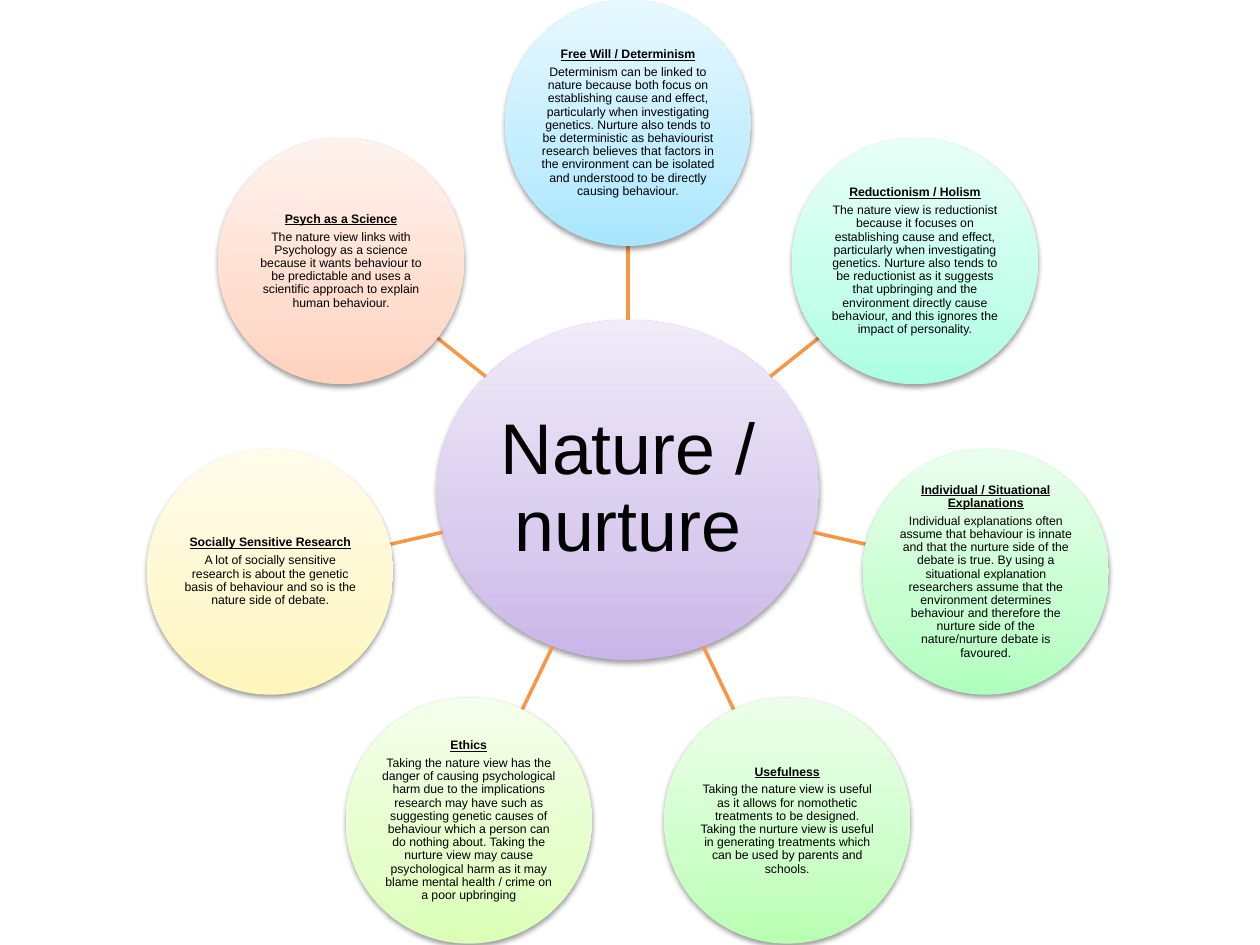
from math import cos, hypot, pi, sin

from lxml.etree import SubElement
from pptx import Presentation
from pptx.dml.color import RGBColor
from pptx.enum.shapes import MSO_CONNECTOR, MSO_SHAPE
from pptx.enum.text import MSO_ANCHOR, PP_ALIGN
from pptx.oxml.ns import qn
from pptx.util import Emu, Pt
from copy import deepcopy

# Content: heading, body, gradient colours from bottom to top; clockwise from 12 o'clock
HUB = ("Nature / nurture", ("C9B5E8", "D8CBEE", "F0EAF9"))
DEBATES = [
    ("Free Will / Determinism",
     "Determinism can be linked to nature because both focus on establishing cause and effect, "
     "particularly when investigating genetics. Nurture also tends to be deterministic as "
     "behaviourist research believes that factors in the environment can be isolated and "
     "understood to be directly causing behaviour.",
     ("A7E6FF", "C1EDFF", "E7F8FF")),
    ("Reductionism / Holism",
     "The nature view is reductionist because it focuses on establishing cause and effect, "
     "particularly when investigating genetics. Nurture also tends to be reductionist as it "
     "suggests that upbringing and the environment directly cause behaviour, and this ignores "
     "the impact of personality.",
     ("ABFFE3", "C3FFEA", "E8FFF7")),
    ("Individual / Situational Explanations",
     "Individual explanations often assume that behaviour is innate and that the nurture side "
     "of the debate is true. By using a situational explanation researchers assume that the "
     "environment determines behaviour and therefore the nurture side of the nature/nurture "
     "debate is favoured.",
     ("AFFFBD", "C6FFD0", "E9FFED")),
    ("Usefulness",
     "Taking the nature view is useful as it allows for nomothetic treatments to be designed. "
     "Taking the nurture view is useful in generating treatments which can be used by parents "
     "and schools.",
     ("B9FFB2", "CDFFC9", "ECFFEA")),
    ("Ethics",
     "Taking the nature view has the danger of causing psychological harm due to the "
     "implications research may have such as suggesting genetic causes of behaviour which a "
     "person can do nothing about. Taking the nurture view may cause psychological harm as it "
     "may blame mental health / crime on a poor upbringing",
     ("DBFFB6", "E5FFCB", "F5FFEB")),
    ("Socially Sensitive Research",
     "A lot of socially sensitive research is about the genetic basis of behaviour and so is "
     "the nature side of debate.",
     ("FFF6B9", "FFF8CE", "FFFCEC")),
    ("Psych as a Science",
     "The nature view links with Psychology as a science because it wants behaviour to be "
     "predictable and uses a scientific approach to explain human behaviour.",
     ("FFD2BD", "FFDED0", "FFF2ED")),
]


class Theme:
    font = "Arial"
    text = RGBColor.from_string("000000")
    spoke = RGBColor.from_string("F79646")
    spoke_width = Pt(2)
    hub_size = 41
    debate_size = 7
    heading_gap = 2.7
    stops = (0, 0.35, 1)


# Geometry in px
SLIDE_WIDTH, SLIDE_HEIGHT = 1260, 945
CENTRE_X, CENTRE_Y = 628, 490
HUB_WIDTH, HUB_HEIGHT = 382, 340
CIRCLE = 246
ORBIT = 367
HUB_INSET = 4


def px(value):
    return Emu(round(value * 914400 / 126))


def polar(radius, angle):
    """Point at a clockwise angle from 12 o'clock around the hub."""
    return CENTRE_X + radius * sin(angle), CENTRE_Y - radius * cos(angle)


def add_text(frame, text, size, first=True, bold=None, underline=None, gap=0):
    paragraph = frame.paragraphs[0] if first else frame.add_paragraph()
    paragraph.alignment = PP_ALIGN.CENTER
    paragraph.line_spacing = 0.9
    paragraph.space_after = Pt(gap)
    run = paragraph.add_run()
    run.text = text
    font = run.font
    font.name, font.size = Theme.font, Pt(size)
    font.bold, font.underline = bold, underline
    font.color.rgb = Theme.text


def add_shadow(shape):
    shape.shadow.inherit = False
    effects = shape._element.spPr.find(qn("a:effectLst"))
    shadow = SubElement(effects, qn("a:outerShdw"), blurRad=str(Pt(3.1)), dist=str(Pt(1.6)),
                        dir="5400000", rotWithShape="0")
    color = SubElement(shadow, qn("a:srgbClr"), val="000000")
    SubElement(color, qn("a:alpha"), val="38000")


def add_bubble(slide, x, y, width, height, colors, inset=0):
    """Shaded ellipse centred on x, y; returns its text frame."""
    shape = slide.shapes.add_shape(MSO_SHAPE.OVAL, px(x - width / 2), px(y - height / 2),
                                   px(width), px(height))
    shape.line.fill.background()
    shape.fill.gradient()
    shape.fill.gradient_angle = 90
    stop_list = shape._element.spPr.find(".//" + qn("a:gsLst"))
    stop_list.append(deepcopy(stop_list[0]))
    for stop, color, position in zip(shape.fill.gradient_stops, colors, Theme.stops):
        stop.color.rgb = RGBColor.from_string(color)
        stop.position = position
    add_shadow(shape)
    frame = shape.text_frame
    frame.word_wrap = True
    frame.vertical_anchor = MSO_ANCHOR.MIDDLE
    frame.margin_left = frame.margin_right = px(inset)
    frame.margin_top = frame.margin_bottom = px(inset)
    return frame


def add_spoke(slide, angle):
    """Line from the hub's edge to the near edge of the circle at this angle."""
    hub_edge = 1 / hypot(2 * sin(angle) / HUB_WIDTH, 2 * cos(angle) / HUB_HEIGHT)
    ends = polar(hub_edge, angle) + polar(ORBIT - CIRCLE / 2, angle)
    line = slide.shapes.add_connector(MSO_CONNECTOR.STRAIGHT, *map(px, ends))
    line.line.color.rgb = Theme.spoke
    line.line.width = Theme.spoke_width
    SubElement(line._element.spPr, qn("a:effectLst"))


def main():
    presentation = Presentation()
    presentation.slide_width, presentation.slide_height = px(SLIDE_WIDTH), px(SLIDE_HEIGHT)
    slide = presentation.slides.add_slide(presentation.slide_layouts[6])

    # Hub
    title, colors = HUB
    frame = add_bubble(slide, CENTRE_X, CENTRE_Y, HUB_WIDTH, HUB_HEIGHT, colors, HUB_INSET)
    add_text(frame, title, Theme.hub_size)

    # Debates evenly spaced around the hub
    for index, (heading, body, colors) in enumerate(DEBATES):
        angle = 2 * pi * index / len(DEBATES)
        add_spoke(slide, angle)
        frame = add_bubble(slide, *polar(ORBIT, angle), CIRCLE, CIRCLE, colors)
        add_text(frame, heading, Theme.debate_size, bold=True, underline=True,
                 gap=Theme.heading_gap)
        add_text(frame, body, Theme.debate_size, first=False)

    presentation.save("out.pptx")


if __name__ == "__main__":
    main()
